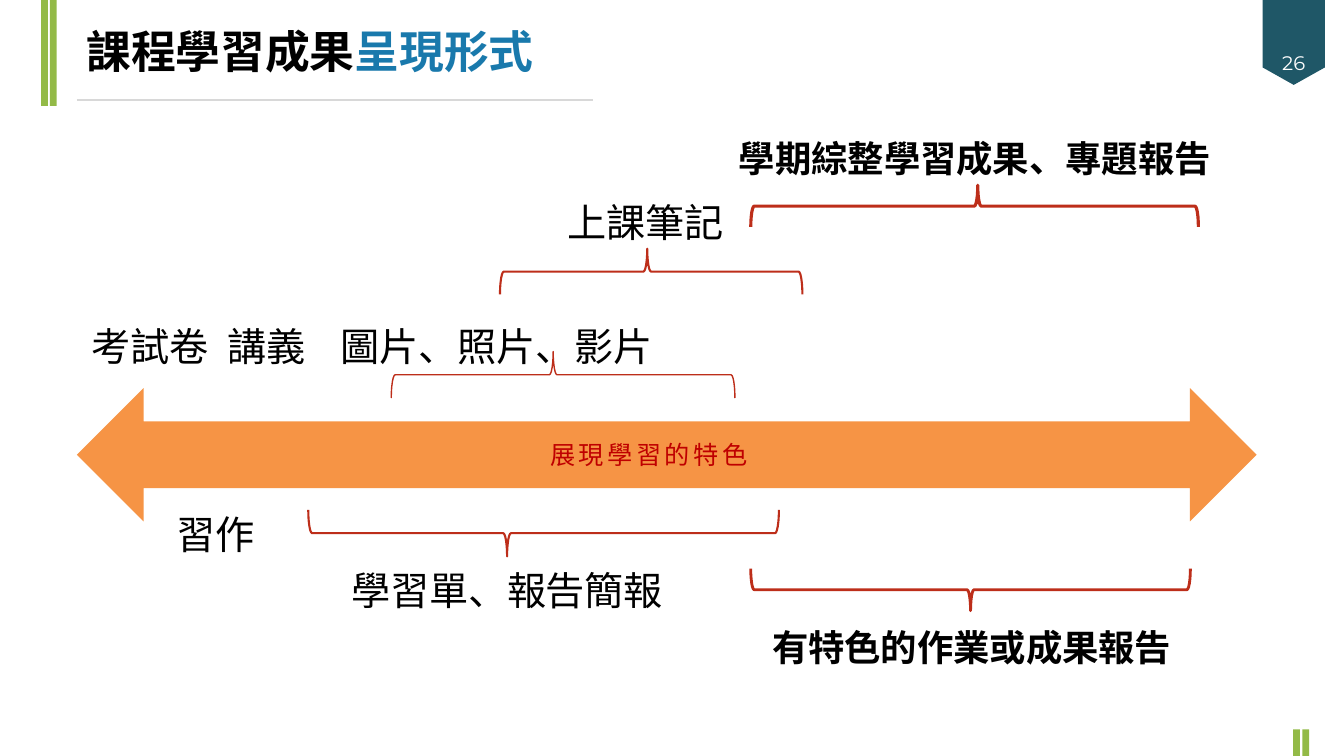
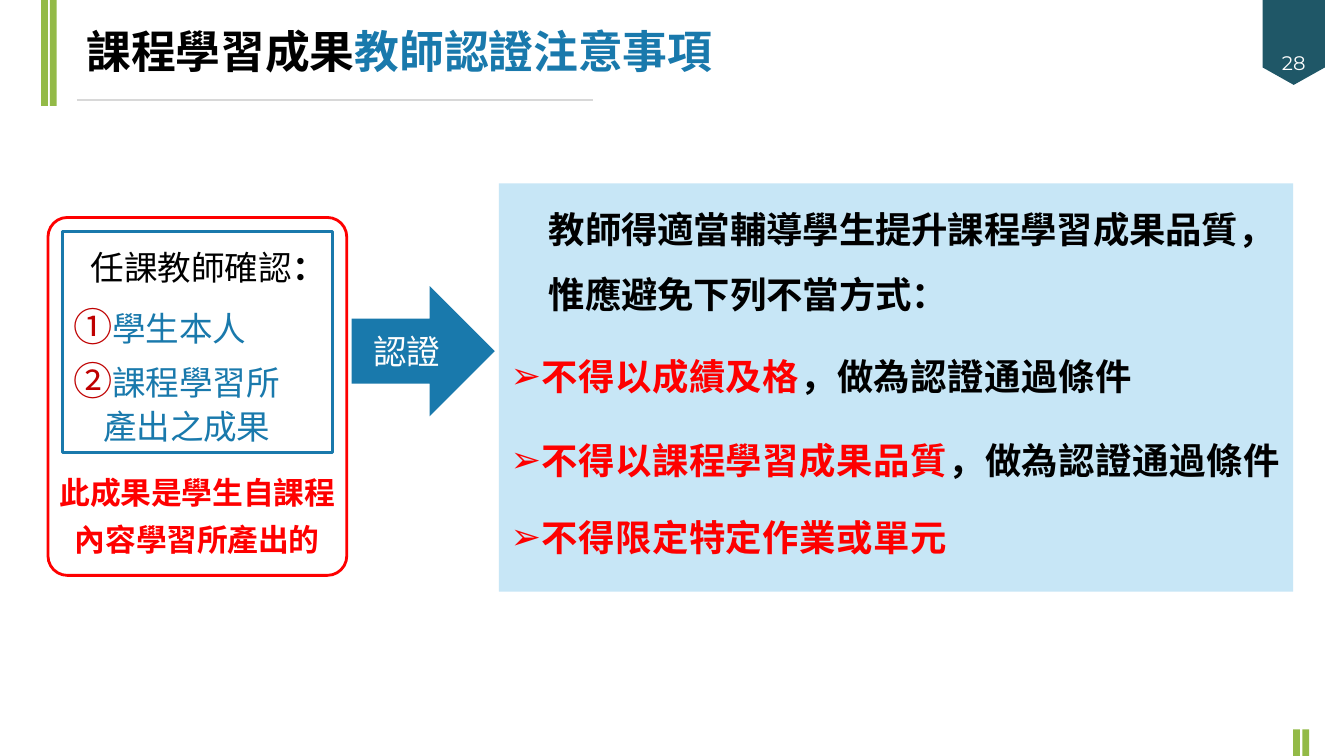
from dataclasses import dataclass

from lxml.etree import SubElement
from pptx import Presentation
from pptx.dml.color import RGBColor
from pptx.enum.shapes import MSO_SHAPE
from pptx.enum.text import MSO_ANCHOR, MSO_AUTO_SIZE, PP_ALIGN
from pptx.oxml.ns import qn
from pptx.util import Cm, Pt


@dataclass(frozen=True)
class Theme:
    font: str = "Noto Sans CJK SC"
    number_font: str = "Montserrat"
    symbol_font: str = "Arial"
    black: str = "000000"
    white: str = "FEFEFE"
    blue: str = "1979AC"
    green: str = "93BA47"
    teal: str = "1F5767"
    rule: str = "D8D8D8"
    orange: str = "F69445"
    brace: str = "BD2E1A"
    dark_red: str = "BF0000"
    red: str = "FE0000"
    panel: str = "C7E6F6"
    title: int = 32
    large: int = 28
    strong: int = 26
    text: int = 24
    note: int = 22
    arrow: int = 18
    number: int = 14


T = Theme()

# Shared decoration, in cm
BAND_WIDTH = 0.17
BANDS = [(1.04, 0, 2.67), (1.26, 0, 2.67), (32.59, 18.38, 0.67), (32.82, 18.38, 0.67)]
BADGE_LEFT, BADGE_WIDTH, BADGE_SHOULDER, BADGE_TIP = 31.82, 1.57, 1.7, 2.14

# Slide on forms: labels by centre, braces by left, right, top, bottom, tip, upward, weight
FORMS_TITLE = ("課程學習成果", "呈現形式", 26)
FORMS_ARROW = "展現學習的特色"
LABELS = [
    ("學期綜整學習成果、專題報告", 24.57, 4.04, True),
    ("上課筆記", 16.26, 5.64, False),
    ("考試卷", 3.78, 8.77, False),
    ("講義", 6.71, 8.77, False),
    ("圖片、照片、影片", 12.52, 8.77, False),
    ("習作", 5.44, 13.49, False),
    ("學習單、報告簡報", 12.78, 14.92, False),
    ("有特色的作業或成果報告", 24.49, 16.35, True),
]
BRACES = [
    (18.92, 30.2, 4.67, 5.72, 24.64, True, 2.25),
    (12.6, 20.22, 6.27, 7.42, 16.31, True, 1.5),
    (9.86, 18.52, 8.86, 10.03, 13.94, True, 1),
    (7.77, 19.63, 12.85, 14.02, 12.78, False, 1.5),
    (18.92, 30, 14.33, 15.39, 24.46, False, 2),
]

# Slide on certification
CERT_TITLE = ("課程學習成果", "教師認證注意事項", 28)
CERT_ARROW = "認證"
CONFIRM_HEAD = ("任課教師確認", "：")
CONFIRM_ITEMS = [("①", ["學生本人"], 14), ("②", ["課程學習所", "產出之成果"], 9)]
CONFIRM_NOTE = ["此成果是學生自課程", "內容學習所產出的"]
INTRO = [("教師得適當輔導學生提升課程學習成果品質，", 0), ("惟應避免下列不當方式：", 12)]
RULES = [
    ("不得以成績及格", "，做為認證通過條件", 25),
    ("不得以課程學習成果品質", "，做為認證通過條件", 26),
    ("不得限定特定作業或單元", "", 21),
]


def box(left, top, width, height):
    return Cm(left), Cm(top), Cm(width), Cm(height)


def paint(shape, fill=None, line=None, weight=1):
    shape.shadow.inherit = False
    if fill:
        shape.fill.solid()
        shape.fill.fore_color.rgb = RGBColor.from_string(fill)
    else:
        shape.fill.background()
    if line:
        shape.line.color.rgb = RGBColor.from_string(line)
        shape.line.width = Pt(weight)
    else:
        shape.line.fill.background()
    return shape


def frame(shape, anchor=MSO_ANCHOR.MIDDLE, insets=(0, 0, 0, 0), wrap=True):
    """Prepare a text frame; insets are left, top, right, bottom in cm."""
    tf = shape.text_frame
    tf.auto_size = MSO_AUTO_SIZE.NONE
    tf.word_wrap = wrap
    tf.vertical_anchor = anchor
    (tf.margin_left, tf.margin_top,
     tf.margin_right, tf.margin_bottom) = [Cm(i) for i in insets]
    return tf


def add_run(p, text, size, color=T.black, bold=False, font=T.font, spacing=0):
    r = p.add_run()
    r.text = text
    r.font.size, r.font.bold, r.font.name = Pt(size), bold, font
    r.font.color.rgb = RGBColor.from_string(color)
    rPr = r._r.get_or_add_rPr()
    SubElement(rPr, qn("a:ea")).set("typeface", font)
    if spacing:
        rPr.set("spc", str(round(spacing * 100)))


def add_paragraph(tf, align=PP_ALIGN.LEFT, line=None, before=0, left=0, first=0, bullet=None):
    """Add a paragraph; line and before are points, left and first are cm."""
    p = tf.paragraphs[0]
    if p.runs:
        p = tf.add_paragraph()
    p.alignment = align
    p.space_before = Pt(before)
    if line:
        p.line_spacing = Pt(line)
    pPr = p._p.get_or_add_pPr()
    pPr.set("marL", str(Cm(left)))
    pPr.set("indent", str(Cm(first)))
    if bullet:
        color = SubElement(pPr, qn("a:buClr"))
        SubElement(color, qn("a:srgbClr")).set("val", T.red)
        SubElement(pPr, qn("a:buFont")).set("typeface", T.symbol_font)
        SubElement(pPr, qn("a:buChar")).set("char", bullet)
    else:
        SubElement(pPr, qn("a:buNone"))
    return p


def place(shape, left, top, width, height):
    shape.left, shape.top, shape.width, shape.height = box(left, top, width, height)


def add_base_slide(prs, layout, title):
    """Add a slide with the bands, rule, number badge and two-colour title."""
    topic, focus, number = title
    s = prs.slides.add_slide(prs.slide_layouts[layout])
    for left, top, height in BANDS:
        paint(s.shapes.add_shape(MSO_SHAPE.RECTANGLE, *box(left, top, BAND_WIDTH, height)), T.green)

    rule = s.shapes.add_connector(1, Cm(1.94), Cm(2.52), Cm(14.94), Cm(2.52))
    rule.line.color.rgb = RGBColor.from_string(T.rule)
    rule.line.width = Pt(0.75)
    SubElement(rule._element.spPr, qn("a:effectLst"))

    right, middle = BADGE_LEFT + BADGE_WIDTH, BADGE_LEFT + BADGE_WIDTH / 2
    outline = s.shapes.build_freeform(Cm(BADGE_LEFT), 0)
    outline.add_line_segments([(Cm(x), Cm(y)) for x, y in [
        (right, 0), (right, BADGE_SHOULDER), (middle, BADGE_TIP), (BADGE_LEFT, BADGE_SHOULDER)]])
    badge = paint(outline.convert_to_shape(), T.teal)
    p = add_paragraph(frame(badge, insets=(0, 1.04, 0, 0)), PP_ALIGN.CENTER)
    add_run(p, str(number), T.number, T.white, font=T.number_font)

    place(s.shapes.title, 2.18, 0.4, 28, 1.76)
    p = add_paragraph(frame(s.shapes.title))
    add_run(p, topic, T.title, bold=True, spacing=-0.1)
    add_run(p, focus, T.title, T.blue, True, spacing=-0.1)
    return s


def add_brace(s, left, right, top, bottom, tip, upward, weight):
    """Turn a left brace a quarter so that its tip points up or down."""
    length, depth = right - left, bottom - top
    shape = s.shapes.add_shape(MSO_SHAPE.LEFT_BRACE, *box(
        (left + right - depth) / 2, (top + bottom - length) / 2, depth, length))
    shape.rotation = 90 if upward else 270
    shape.adjustments[1] = (right - tip if upward else tip - left) / length
    paint(shape, line=T.brace, weight=weight)


def add_label(s, text, x, y, bold):
    width, height = 14, 1.6
    label = s.shapes.add_textbox(*box(x - width / 2, y - height / 2 - 0.05, width, height))
    p = add_paragraph(frame(label), PP_ALIGN.CENTER)
    add_run(p, text, T.strong if bold else T.large, bold=bold, spacing=-0.1)


def build_forms(prs):
    s = add_base_slide(prs, 5, FORMS_TITLE)
    for brace in BRACES:
        add_brace(s, *brace)
    arrow = s.shapes.add_shape(MSO_SHAPE.LEFT_RIGHT_ARROW, *box(1.94, 9.78, 29.73, 3.36))
    p = add_paragraph(frame(paint(arrow, T.orange), insets=(0, 0, 0.9, 0)), PP_ALIGN.CENTER)
    add_run(p, FORMS_ARROW, T.arrow, T.dark_red, spacing=2.5)
    for label in LABELS:
        add_label(s, *label)


def build_certification(prs):
    s = add_base_slide(prs, 1, CERT_TITLE)

    outer = s.shapes.add_shape(MSO_SHAPE.ROUNDED_RECTANGLE, *box(1.21, 5.48, 7.53, 9.02))
    outer.adjustments[0] = 0.065
    tf = frame(paint(outer, line=T.red, weight=2), MSO_ANCHOR.BOTTOM, (0, 0, 0, 0.3))
    for text in CONFIRM_NOTE:
        p = add_paragraph(tf, PP_ALIGN.CENTER, line=34)
        add_run(p, text, T.note, T.red, True, spacing=-0.1)

    inner = s.shapes.add_shape(MSO_SHAPE.RECTANGLE, *box(1.57, 5.84, 6.81, 5.57))
    tf = frame(paint(inner, line=T.blue, weight=2), MSO_ANCHOR.TOP, (0, 0.35, 0, 0))
    p = add_paragraph(tf, line=30, left=0.71)
    for text, bold in zip(CONFIRM_HEAD, (False, True)):
        add_run(p, text, T.text, bold=bold)
    for mark, lines, before in CONFIRM_ITEMS:
        p = add_paragraph(tf, line=30, before=before, left=1.03, first=-0.75)
        add_run(p, mark, T.large, T.dark_red, font=T.symbol_font)
        for i, text in enumerate(lines):
            if i:
                p.add_line_break()
            add_run(p, text, T.text, T.blue, spacing=-0.1)

    arrow = s.shapes.add_shape(MSO_SHAPE.RIGHT_ARROW, *box(8.86, 7.21, 3.61, 3.28))
    p = add_paragraph(frame(paint(arrow, T.blue)), PP_ALIGN.CENTER)
    add_run(p, CERT_ARROW, T.text, T.white, spacing=-0.1)

    body = s.placeholders[1]
    place(body, 12.57, 4.62, 20.02, 10.29)
    body.fill.solid()
    body.fill.fore_color.rgb = RGBColor.from_string(T.panel)
    tf = frame(body, MSO_ANCHOR.TOP, (0, 0.51, 0, 0))
    for text, before in INTRO:
        p = add_paragraph(tf, line=34, before=before, left=1.26)
        add_run(p, text, T.strong, bold=True, spacing=-0.1)
    for ban, rest, before in RULES:
        p = add_paragraph(tf, line=34, before=before, left=1.06, first=-0.76, bullet="➢")
        add_run(p, ban, T.strong, T.red, True, spacing=0.4)
        if rest:
            add_run(p, rest, T.strong, bold=True, spacing=0.3)


def main():
    prs = Presentation()
    prs.slide_width, prs.slide_height = Cm(33.87), Cm(19.05)
    build_forms(prs)
    build_certification(prs)
    prs.save("out.pptx")


if __name__ == "__main__":
    main()
